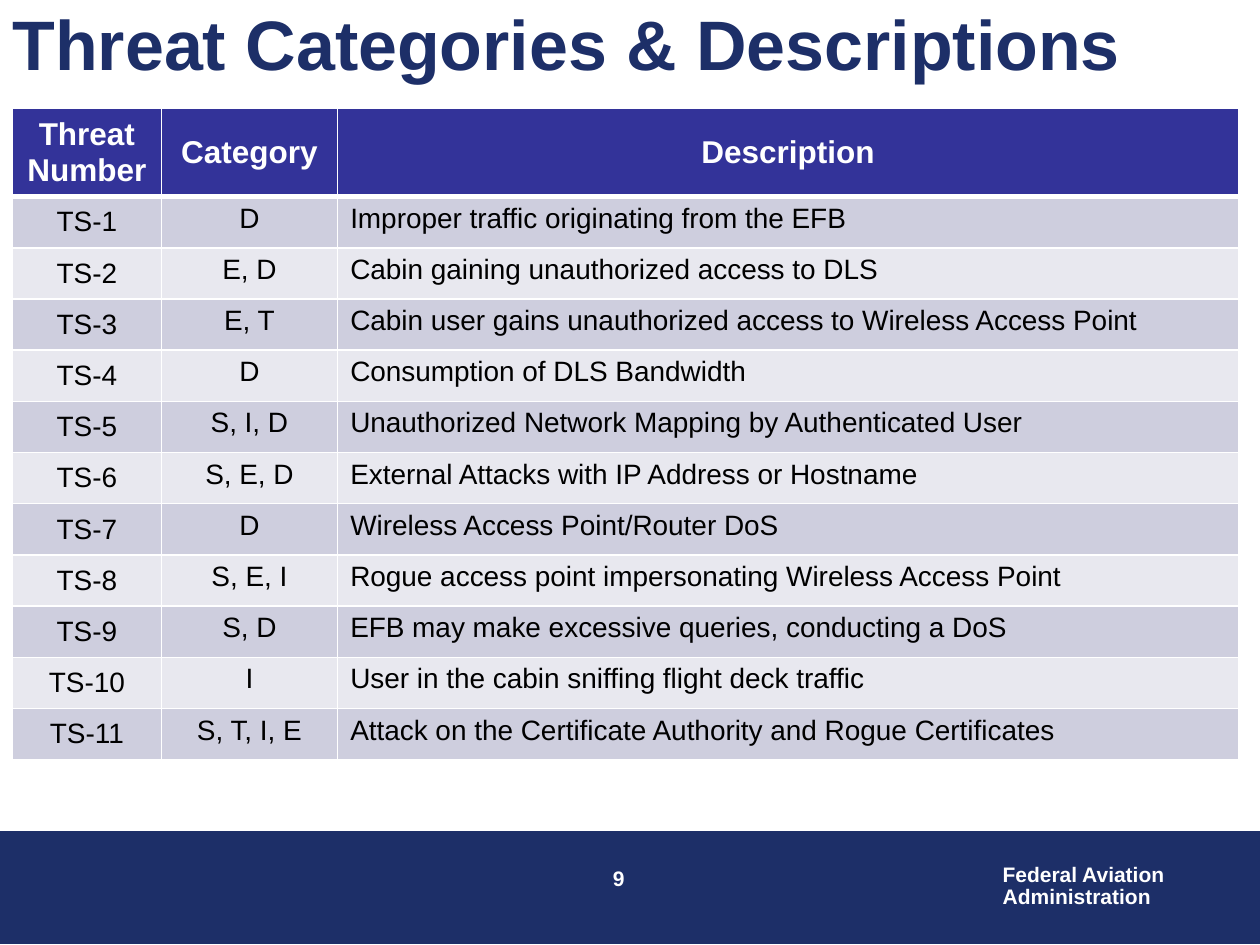
"""Build the threat categories slide with its table and footer band."""
from lxml import etree
from pptx import Presentation
from pptx.dml.color import RGBColor
from pptx.enum.shapes import MSO_SHAPE
from pptx.enum.text import MSO_ANCHOR, PP_ALIGN
from pptx.oxml.ns import qn
from pptx.util import Inches, Pt

LEFT, CENTER = PP_ALIGN.LEFT, PP_ALIGN.CENTER
TOP, MIDDLE = MSO_ANCHOR.TOP, MSO_ANCHOR.MIDDLE
RECTANGLE = MSO_SHAPE.RECTANGLE
TITLE_ONLY = 5
GRID_COLUMNS, GRID_ROWS = 100, 75
COLORS = {
    "navy": "1D2F68",
    "header": "333399",
    "band_dark": "CECEDE",
    "band_light": "E8E8EF",
    "white": "FFFFFF",
    "black": "000000",
}
HEADINGS = ["Threat\nNumber", "Category", "Description"]
THREATS = [
    ("D", "Improper traffic originating from the EFB"),
    ("E, D", "Cabin gaining unauthorized access to DLS"),
    ("E, T", "Cabin user gains unauthorized access to Wireless Access Point"),
    ("D", "Consumption of DLS Bandwidth"),
    ("S, I, D", "Unauthorized Network Mapping by Authenticated User"),
    ("S, E, D", "External Attacks with IP Address or Hostname"),
    ("D", "Wireless Access Point/Router DoS"),
    ("S, E, I", "Rogue access point impersonating Wireless Access Point"),
    ("S, D", "EFB may make excessive queries, conducting a DoS"),
    ("I", "User in the cabin sniffing flight deck traffic"),
    ("S, T, I, E", "Attack on the Certificate Authority and Rogue Certificates"),
]


def rgb(name):
    """Return the named color."""
    return RGBColor.from_string(COLORS[name])


def write_text(frame, text, size=12, color="white", bold=True, align=LEFT, spacing=None):
    """Write one paragraph per line of text in the given format."""
    frame.text = text
    for paragraph in frame.paragraphs:
        paragraph.alignment = align
        if spacing:
            paragraph.line_spacing = spacing
        for run in paragraph.runs:
            run.font.name = "Arial"
            run.font.size = Pt(size)
            run.font.bold = bold
            run.font.color.rgb = rgb(color)


def set_borders(cell, top=1, bottom=1):
    """Give a cell white borders, with widths in points."""
    properties = cell._tc.get_or_add_tcPr()
    for tag, width in (("lnL", 1), ("lnR", 1), ("lnT", top), ("lnB", bottom)):
        line = etree.SubElement(properties, qn(f"a:{tag}"), w=str(Pt(width)))
        fill = etree.SubElement(line, qn("a:solidFill"))
        etree.SubElement(fill, qn("a:srgbClr"), val=COLORS["white"])


class SlideBuilder:
    """Place styled elements on the current slide by grid units."""

    def __init__(self, presentation):
        """Add a title-only slide and measure its grid."""
        self.slide = presentation.slides.add_slide(presentation.slide_layouts[TITLE_ONLY])
        self.column = presentation.slide_width / GRID_COLUMNS
        self.row = presentation.slide_height / GRID_ROWS

    def box(self, left, top, width, height):
        """Turn grid units into slide lengths."""
        units = (self.column, self.row) * 2
        return [round(value * unit) for value, unit in zip((left, top, width, height), units)]

    def band(self, *area, color):
        """Add a plain colored rectangle."""
        shape = self.slide.shapes.add_shape(RECTANGLE, *self.box(*area))
        shape.shadow.inherit = False
        shape.fill.solid()
        shape.fill.fore_color.rgb = rgb(color)
        shape.line.color.rgb = rgb(color)
        shape.line.width = Pt(0.75)

    def title(self, *area, text):
        """Move and format the title placeholder."""
        shape = self.slide.shapes.title
        shape.left, shape.top, shape.width, shape.height = self.box(*area)
        shape.text_frame.vertical_anchor = MIDDLE
        write_text(shape.text_frame, text, size=40, color="navy")

    def label(self, *area, text, wrap=True, **text_format):
        """Add a text box."""
        frame = self.slide.shapes.add_textbox(*self.box(*area)).text_frame
        frame.word_wrap = wrap
        write_text(frame, text, **text_format)

    def table(self, *area, rows, widths, header_height):
        """Add a banded table with a header row."""
        table = self.slide.shapes.add_table(len(rows), len(widths), *self.box(*area)).table
        for column, width in zip(table.columns, widths):
            column.width = round(width * self.column)
        body_height = (area[3] - header_height) / (len(rows) - 1)
        for row_index, values in enumerate(rows):
            is_header = row_index == 0
            height = header_height if is_header else body_height
            table.rows[row_index].height = round(height * self.row)
            fill = "header" if is_header else ("band_light", "band_dark")[row_index % 2]
            for column_index, text in enumerate(values):
                cell = table.cell(row_index, column_index)
                set_borders(cell, 3 if row_index == 1 else 1, 3 if is_header else 1)
                cell.fill.solid()
                cell.fill.fore_color.rgb = rgb(fill)
                cell.vertical_anchor = MIDDLE if is_header or column_index == 0 else TOP
                write_text(
                    cell.text_frame,
                    text,
                    size=18 if is_header else 16,
                    color="white" if is_header else "black",
                    bold=is_header,
                    align=CENTER if is_header or column_index < 2 else LEFT,
                )


def main():
    """Build and save the presentation."""
    presentation = Presentation()
    presentation.slide_width, presentation.slide_height = Inches(10), Inches(7.5)
    builder = SlideBuilder(presentation)
    builder.band(0, 66, 100, 8.9, color="navy")
    builder.label(38.7, 68.2, 20.8, 5, text="9", align=CENTER)
    builder.label(
        78.6, 68.2, 15, 4.4, text="Federal Aviation\nAdministration", wrap=False, spacing=0.85
    )
    builder.title(0, 0, 92.7, 6.7, text="Threat Categories & Descriptions")
    threats = [(f"TS-{number}", *threat) for number, threat in enumerate(THREATS, 1)]
    builder.table(
        1, 8.6, 97.3, 51.1, rows=[HEADINGS, *threats], widths=[11.8, 14, 71.5], header_height=6.4
    )
    presentation.save("out.pptx")


if __name__ == "__main__":
    main()
